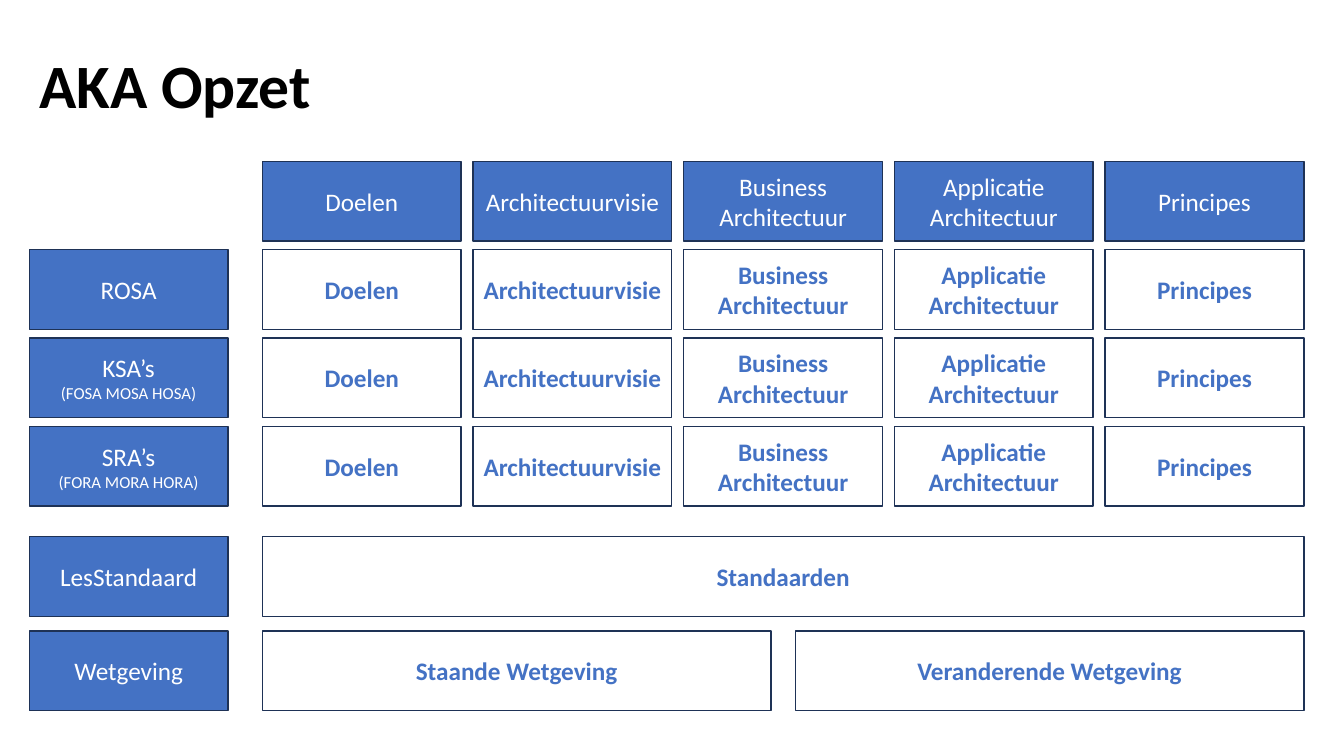
from pptx import Presentation
from pptx.dml.color import RGBColor
from pptx.enum.shapes import MSO_SHAPE
from pptx.enum.text import MSO_ANCHOR, PP_ALIGN
from pptx.util import Pt

RECTANGLE = MSO_SHAPE.RECTANGLE
MIDDLE = MSO_ANCHOR.MIDDLE
CENTER, LEFT = PP_ALIGN.CENTER, PP_ALIGN.LEFT

# Content: each label is a list of paragraphs
TITLE = "AKA Opzet"
COLUMNS = [
    ["Doelen"],
    ["Architectuurvisie"],
    ["Business Architectuur"],
    ["Applicatie", "Architectuur"],
    ["Principes"],
]
LAYERS = [
    ["ROSA"],
    ["KSA’s", "(FOSA MOSA HOSA)"],
    ["SRA’s", "(FORA MORA HORA)"],
]
# Foundation rows: label, top, cells sharing the full width
FOUNDATIONS = [
    (["LesStandaard"], 383.4, [["Standaarden"]]),
    (["Wetgeving"], 450.7, [["Staande Wetgeving"], ["Veranderende Wetgeving"]]),
]

# Layout in points
LABEL_LEFT, GRID_LEFT, GRID_TOP = 20.9, 187.4, 115.2
BOX_WIDTH, BOX_HEIGHT = 142, 57
COLUMN_STEP, ROW_STEP = 150.5, 63.1
FOUNDATION_GAP = 17.4
GRID_WIDTH = (len(COLUMNS) - 1) * COLUMN_STEP + BOX_WIDTH

# Formats
BLUE, NAVY, WHITE, BLACK = "4472C4", "1E3256", "FFFFFF", "000000"
HEADER = {"fill": BLUE, "color": WHITE, "bold": False}
CELL = {"fill": WHITE, "color": BLUE, "bold": True}


def rgb(value):
    return RGBColor.from_string(value)


def write(frame, lines, sizes, color, bold, align):
    frame.word_wrap = True
    frame.vertical_anchor = MIDDLE
    for index, (line, size) in enumerate(zip(lines, sizes)):
        para = frame.add_paragraph() if index else frame.paragraphs[0]
        para.alignment = align
        span = para.add_run()
        span.text = line
        for name, value in {"name": "Calibri", "size": Pt(size), "bold": bold}.items():
            setattr(span.font, name, value)
        span.font.color.rgb = rgb(color)


def add_box(page, left, top, width, lines, style):
    box = page.shapes.add_shape(RECTANGLE, Pt(left), Pt(top), Pt(width), Pt(BOX_HEIGHT))
    box.shadow.inherit = False
    box.fill.solid()
    box.fill.fore_color.rgb = rgb(style["fill"])
    box.line.color.rgb = rgb(NAVY)
    box.line.width = Pt(1)
    sizes = [18 if not line.startswith("(") else 12 for line in lines]
    write(box.text_frame, lines, sizes, style["color"], style["bold"], CENTER)


def main():
    deck = Presentation()
    deck.slide_width, deck.slide_height = Pt(960), Pt(540)
    page = deck.slides.add_slide(deck.slide_layouts[6])

    # Title
    title = page.shapes.add_textbox(Pt(20.9), Pt(10.8), Pt(872.6), Pt(104.4))
    write(title.text_frame, [TITLE], [44], BLACK, True, LEFT)
    title.text_frame.paragraphs[0].line_spacing = 0.9

    # Header row and architecture grid
    for row in range(len(LAYERS) + 1):
        top = GRID_TOP + row * ROW_STEP
        for column, lines in enumerate(COLUMNS):
            left = GRID_LEFT + column * COLUMN_STEP
            add_box(page, left, top, BOX_WIDTH, lines, CELL if row else HEADER)
        if row:
            add_box(page, LABEL_LEFT, top, BOX_WIDTH, LAYERS[row - 1], HEADER)

    # Foundation rows
    for label, top, cells in FOUNDATIONS:
        add_box(page, LABEL_LEFT, top, BOX_WIDTH, label, HEADER)
        width = (GRID_WIDTH - (len(cells) - 1) * FOUNDATION_GAP) / len(cells)
        for index, lines in enumerate(cells):
            left = GRID_LEFT + index * (width + FOUNDATION_GAP)
            add_box(page, left, top, width, lines, CELL)

    deck.save("out.pptx")


if __name__ == "__main__":
    main()
